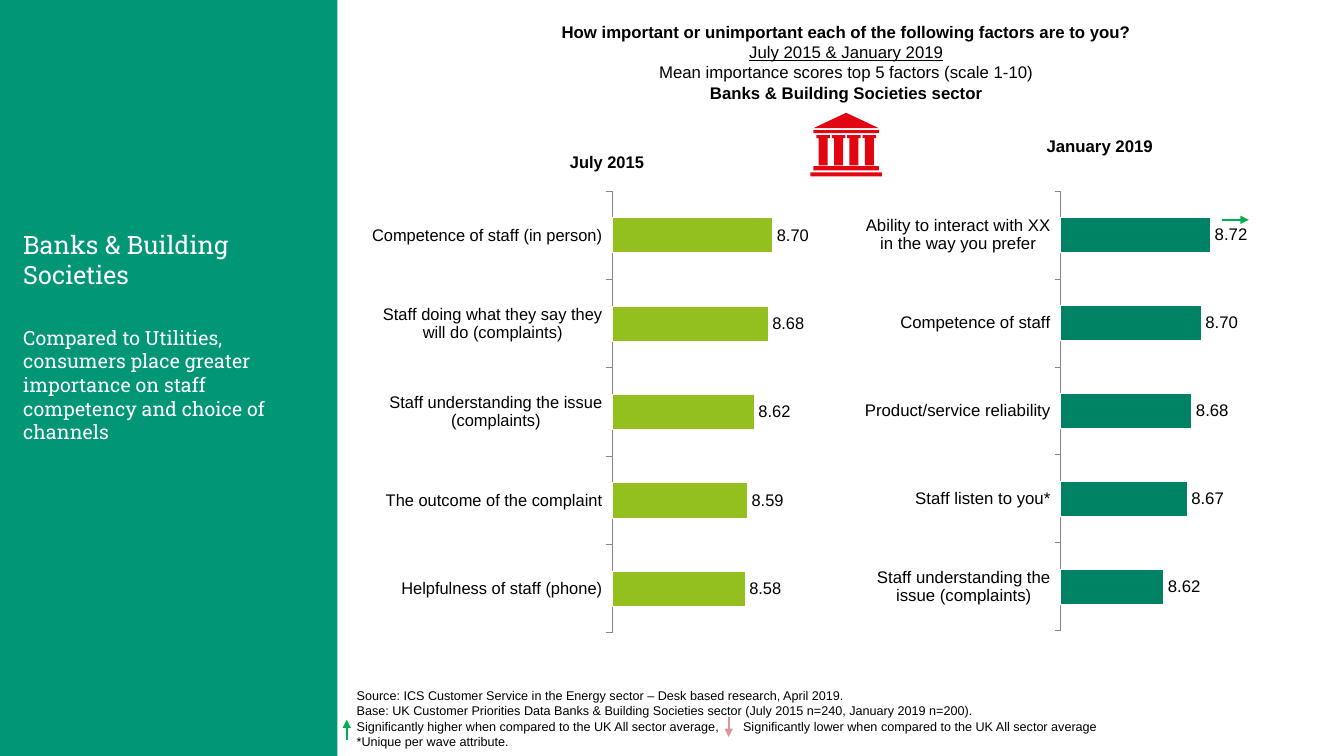
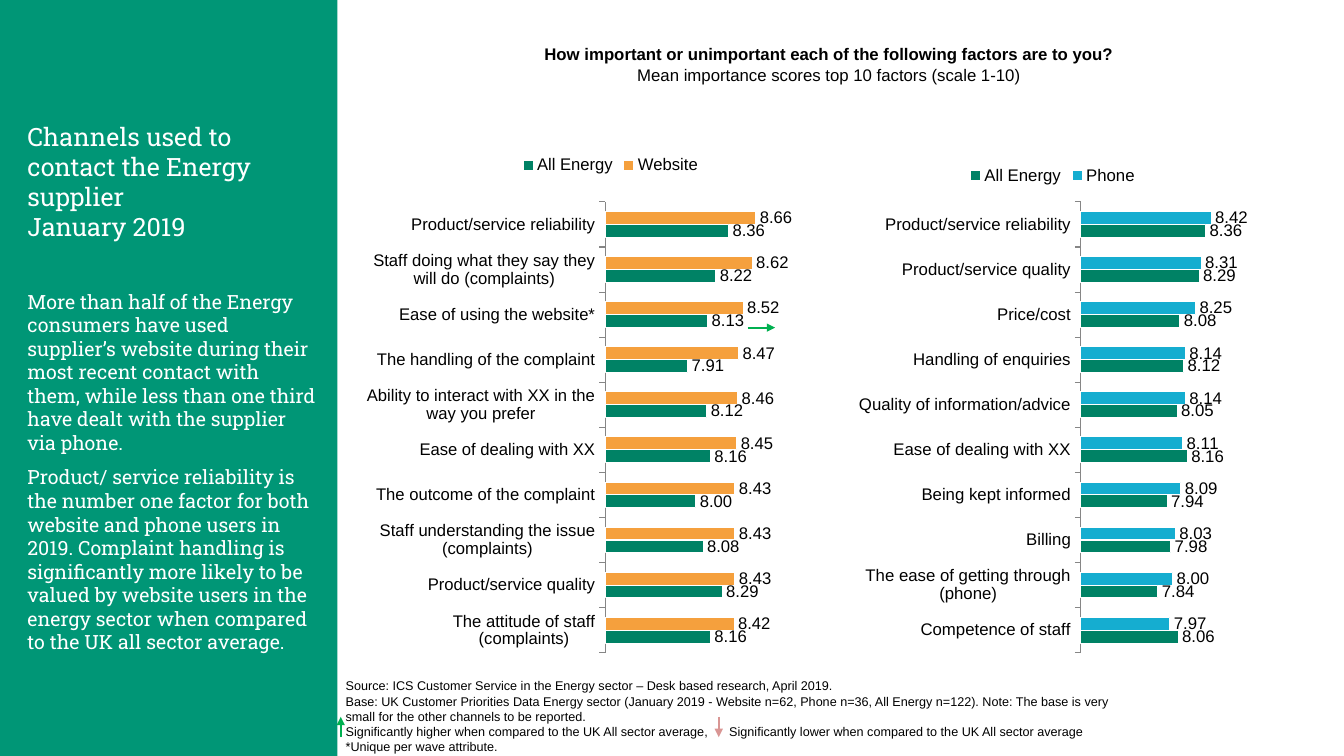
from lxml import etree
from pptx import Presentation
from pptx.chart.data import CategoryChartData
from pptx.dml.color import RGBColor
from pptx.enum.chart import XL_CHART_TYPE, XL_LABEL_POSITION, XL_LEGEND_POSITION, XL_TICK_MARK
from pptx.enum.shapes import MSO_CONNECTOR, MSO_SHAPE
from pptx.enum.text import PP_ALIGN
from pptx.oxml.ns import qn
from pptx.util import Pt

BARS = XL_CHART_TYPE.BAR_CLUSTERED
OUTER = XL_LABEL_POSITION.OUTSIDE_END
TOP = XL_LEGEND_POSITION.TOP
TICK, NONE = XL_TICK_MARK.OUTSIDE, XL_TICK_MARK.NONE
LINE = MSO_CONNECTOR.STRAIGHT
RECT = MSO_SHAPE.RECTANGLE
LEFT, MID = PP_ALIGN.LEFT, PP_ALIGN.CENTER


def rgb(code):
    return RGBColor.from_string(code)


def place(part, **spots):
    """Give a chart part a manual layout in fractions of the chart."""
    for old in part.findall(qn("c:layout")):
        part.remove(old)
    layout = etree.Element(qn("c:layout"))
    manual = etree.SubElement(layout, qn("c:manualLayout"))
    if "w" in spots:
        etree.SubElement(manual, qn("c:layoutTarget")).set("val", "inner")
    for axis in "xy":
        etree.SubElement(manual, qn(f"c:{axis}Mode")).set("val", "edge")
    for key, value in spots.items():
        etree.SubElement(manual, qn(f"c:{key}")).set("val", str(value))
    over = part.find(qn("c:overlay"))
    part.insert(0 if over is None else part.index(over), layout)


# Shared colours and text styles
TEAL, GREEN, LIME = "009676", "008265", "93C01F"
ORANGE, BLUE, RED = "F5A03D", "15ADD0", "E20613"
WHITE, BLACK, GREY = "FFFFFF", "000000", "868686"
UP, DOWN = "00B050", "D99694"

HEAD = dict(name="Roboto Slab", size=Pt(18))
BODY = dict(name="Roboto Slab", size=Pt(14))
PLAIN = dict(name="Arial", size=Pt(12))
BOLD = dict(PLAIN, bold=True)
UNDER = dict(PLAIN, underline=True)
NOTE = dict(name="Arial", size=Pt(9))

ASK = "How important or unimportant each of the following factors are to you?"
SOURCE = "Source: ICS Customer Service in the Energy sector – Desk based research, April 2019."
KEY = ("Significantly higher when compared to the UK All sector average,"
       "\tSignificantly lower when compared to the UK All sector average")
UNIQUE = "*Unique per wave attribute."

# Paragraphs are (text, style, space before); places are left, top, width, height
BANKS = dict(
    side=((0, 160, 230, 170), [
        ("Banks & Building Societies", HEAD, 0),
        ("Compared to Utilities, consumers place greater importance on staff "
         "competency and choice of channels", BODY, 26)]),
    title=((325.5, 12, 558, 65.5), [
        (ASK, BOLD, 0),
        ("July 2015 & January 2019", UNDER, 0),
        ("Mean importance scores top 5 factors (scale 1-10)", PLAIN, 0),
        ("Banks & Building Societies sector", BOLD, 0)]),
    foot=((247.7, 488, 720, 51), 276, [
        SOURCE,
        "Base: UK Customer Priorities Data Banks & Building Societies sector "
        "(July 2015 n=240, January 2019 n=200).",
        KEY, UNIQUE]),
    charts=[
        dict(left=265.7, top=95, scale=(8, 8.9), plot=(0.51, 0.11, 0.457, 0.835),
             title="July 2015", spot=(0.41, 0.03),
             cats=["Competence of staff (in person)",
                   "Staff doing what they say they will do (complaints)",
                   "Staff understanding the issue (complaints)",
                   "The outcome of the complaint",
                   "Helpfulness of staff (phone)"],
             series=[("Series 1", LIME, [8.7, 8.68, 8.62, 8.59, 8.58])]),
        dict(left=613.4, top=95, scale=(8.4, 8.9), plot=(0.437, 0.11, 0.508, 0.831),
             title="January 2019", spot=(0.4, 0),
             cats=["Ability to interact with XX in the way you prefer",
                   "Competence of staff",
                   "Product/service reliability",
                   "Staff listen to you*",
                   "Staff understanding the issue (complaints)"],
             series=[("Series 1", GREEN, [8.72, 8.7, 8.68, 8.67, 8.62])])],
    arrows=[(520.5, 512, 520.5, 526.5, DOWN), (247.7, 528.5, 247.7, 514, UP),
            (872.6, 157, 892, 157, UP)])

PLOT = (0.511, 0.134, 0.457, 0.852)
CHANNELS = dict(
    side=((3, 82.8, 230, 389), [
        ("Channels used to contact the Energy supplier", HEAD, 0),
        ("January 2019", HEAD, 0),
        ("More than half of the Energy consumers have used supplier’s website during "
         "their most recent contact with them, while less than one third have dealt "
         "with the supplier via phone.", BODY, 34),
        ("Product/ service reliability is the number one factor for both website and "
         "phone users in 2019. Complaint handling is significantly more likely to be "
         "valued by website users in the energy sector when compared to the UK all "
         "sector average.", BODY, 8)]),
    title=((378.7, 28, 427, 36), [
        (ASK, BOLD, 0),
        ("Mean importance scores top 10 factors (scale 1-10)", PLAIN, 0)]),
    foot=((239.8, 481, 566, 62), 274, [
        SOURCE,
        "Base: UK Customer Priorities Data Energy sector (January 2019 - Website n=62, "
        "Phone n=36, All Energy n=122). Note: The base is very small for the other "
        "channels to be reported.",
        KEY, UNIQUE]),
    charts=[
        dict(left=262, top=93.6, scale=(7, 9.3), plot=PLOT, title=None, spot=(0.32, 0.04),
             cats=["Product/service reliability",
                   "Staff doing what they say they will do (complaints)",
                   "Ease of using the website*",
                   "The handling of the complaint",
                   "Ability to interact with XX in the way you prefer",
                   "Ease of dealing with XX",
                   "The outcome of the complaint",
                   "Staff understanding the issue (complaints)",
                   "Product/service quality",
                   "The attitude of staff (complaints)"],
             series=[("Website", ORANGE,
                      [8.66, 8.62, 8.52, 8.47, 8.46, 8.45, 8.43, 8.43, 8.43, 8.42]),
                     ("All Energy", GREEN,
                      [8.36, 8.22, 8.13, 7.91, 8.12, 8.16, 8, 8.08, 8.29, 8.16])]),
        dict(left=603.4, top=93.6, scale=(7, 9.3), plot=PLOT, title=None, spot=(0.26, 0.06),
             cats=["Product/service reliability",
                   "Product/service quality",
                   "Price/cost",
                   "Handling of enquiries",
                   "Quality of information/advice",
                   "Ease of dealing with XX",
                   "Being kept informed",
                   "Billing",
                   "The ease of getting through (phone)",
                   "Competence of staff"],
             series=[("Phone", BLUE,
                      [8.42, 8.31, 8.25, 8.14, 8.14, 8.11, 8.09, 8.03, 8, 7.97]),
                     ("All Energy", GREEN,
                      [8.36, 8.29, 8.08, 8.12, 8.05, 8.16, 7.94, 7.98, 7.84, 8.06])])],
    arrows=[(534, 234, 553.7, 234, UP), (513.4, 512, 513.4, 526.5, DOWN),
            (243.4, 526.5, 243.4, 512, UP)])

deck = Presentation()
deck.slide_width, deck.slide_height = Pt(960), Pt(540)

for page in (BANKS, CHANNELS):
    slide = deck.slides.add_slide(deck.slide_layouts[6])
    shapes = slide.shapes

    # Side band
    band = shapes.add_shape(RECT, 0, 0, Pt(241), Pt(540))
    band.shadow.inherit = False
    band.fill.solid()
    band.fill.fore_color.rgb = rgb(TEAL)
    band.line.fill.background()

    # Side text, title and footer
    spot, stop, lines = page["foot"]
    notes = [(line, NOTE, 0) for line in lines]
    for (box, paras), color, align, inset in (
            (page["side"], WHITE, LEFT, 16.6),
            (page["title"], BLACK, MID, 7.2),
            ((spot, notes), BLACK, LEFT, 7.2)):
        frame = shapes.add_textbox(*map(Pt, box)).text_frame
        frame.word_wrap = True
        frame.margin_left = Pt(inset)
        for i, (text, style, before) in enumerate(paras):
            para = frame.add_paragraph() if i else frame.paragraphs[0]
            para.alignment = align
            if before:
                para.space_before = Pt(before)
            if "\t" in text:
                tabs = etree.SubElement(para._p.get_or_add_pPr(), qn("a:tabLst"))
                etree.SubElement(tabs, qn("a:tab"), pos=str(Pt(stop)), algn="l")
            run = para.add_run()
            run.text = text
            run.font.color.rgb = rgb(color)
            for key, value in style.items():
                setattr(run.font, key, value)

    # Bar charts
    for item in page["charts"]:
        data = CategoryChartData(number_format="0.00")
        data.categories = item["cats"]
        for name, color, values in item["series"]:
            data.add_series(name, values)
        chart = shapes.add_chart(BARS, Pt(item["left"]), Pt(item["top"]),
                                 Pt(330), Pt(378), data).chart
        chart.font.name, chart.font.size = "Arial", Pt(12)
        chart.font.color.rgb = rgb(BLACK)

        cat, val = chart.category_axis, chart.value_axis
        cat.reverse_order = True
        cat.major_tick_mark, cat.minor_tick_mark = TICK, NONE
        cat.format.line.color.rgb = rgb(GREY)
        cat.format.line.width = Pt(0.75)
        val.minimum_scale, val.maximum_scale = item["scale"]
        val.has_major_gridlines = False
        val.visible = False

        plot = chart.plots[0]
        plot.gap_width = 150
        plot.vary_by_categories = False
        plot.has_data_labels = True
        labels = plot.data_labels
        labels.show_value = True
        labels.number_format, labels.number_format_is_linked = "0.00", False
        labels.position = OUTER
        for bar, (name, color, values) in zip(plot.series, item["series"]):
            bar.format.fill.solid()
            bar.format.fill.fore_color.rgb = rgb(color)
            bar.format.line.color.rgb = rgb(WHITE)
            bar.format.line.width = Pt(0.75)

        # Chart title or legend
        chart.has_title = bool(item["title"])
        chart.has_legend = not chart.has_title
        if chart.has_title:
            run = chart.chart_title.text_frame.paragraphs[0].add_run()
            run.text = item["title"]
            for key, value in BOLD.items():
                setattr(run.font, key, value)
        else:
            chart.legend.position = TOP
            chart.legend.include_in_layout = False
        root = chart._chartSpace
        x, y = item["spot"]
        place(root.find(".//" + qn("c:title" if chart.has_title else "c:legend")), x=x, y=y)
        x, y, w, h = item["plot"]
        place(root.find(".//" + qn("c:plotArea")), x=x, y=y, w=w, h=h)

    # Significance arrows
    for x1, y1, x2, y2, color in page["arrows"]:
        arrow = shapes.add_connector(LINE, Pt(x1), Pt(y1), Pt(x2), Pt(y2))
        arrow.line.color.rgb = rgb(color)
        arrow.line.width = Pt(1.5)
        etree.SubElement(arrow.line._get_or_add_ln(), qn("a:tailEnd"), type="triangle")
        etree.SubElement(arrow._element.spPr, qn("a:effectLst"))

# Bank icon on the first slide: a roof, three slabs and four columns in one outline
slabs = [(581, 92.9, 46.8, 2.2), (581, 118.8, 46.8, 2.9), (578.9, 123.1, 51.1, 2.9)]
for i in range(4):
    x = 583.2 + 11 * i
    slabs += [(x, 96.5, 9.6, 2.2), (x + 1.6, 98.7, 6.4, 19.4)]
pen = deck.slides[0].shapes.build_freeform(Pt(581), Pt(91.6))
pen.add_line_segments([(Pt(604.4), Pt(80.6)), (Pt(627.8), Pt(91.6))])
for slab in slabs:
    x, y, w, h = map(Pt, slab)
    pen.move_to(x, y)
    pen.add_line_segments([(x + w, y), (x + w, y + h), (x, y + h)])
icon = pen.convert_to_shape()
icon.shadow.inherit = False
icon.fill.solid()
icon.fill.fore_color.rgb = rgb(RED)
icon.line.fill.background()

deck.save("out.pptx")
